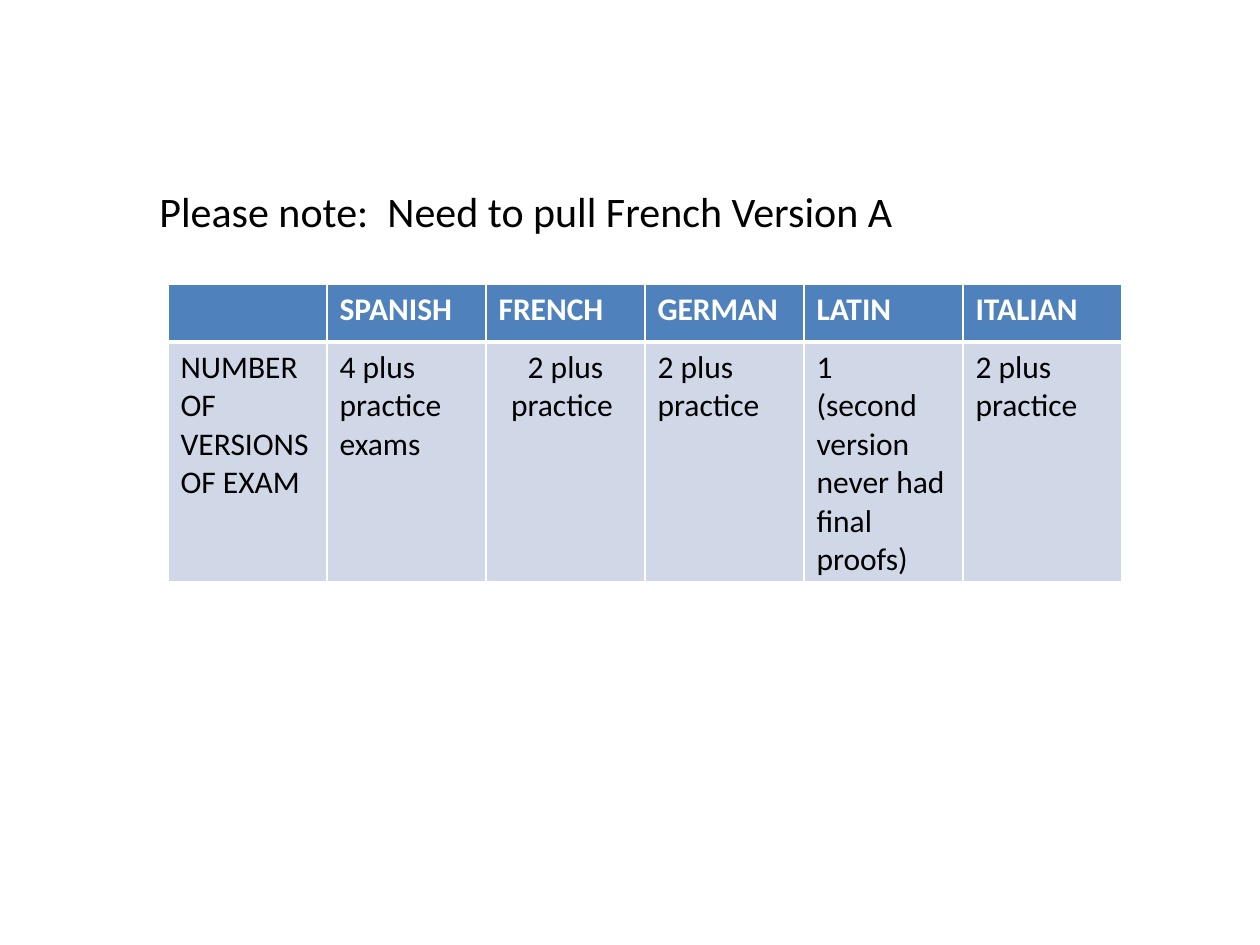
from dataclasses import dataclass

from lxml import etree
from pptx import Presentation
from pptx.dml.color import RGBColor
from pptx.enum.text import PP_ALIGN
from pptx.oxml.ns import qn
from pptx.util import Emu, Pt

LEFT, CENTER = PP_ALIGN.LEFT, PP_ALIGN.CENTER
PX = 914400 // 126


@dataclass(frozen=True)
class Theme:
    font: str = "Calibri"
    note_size: int = 24
    cell_size: int = 18
    black: str = "000000"
    white: str = "FFFFFF"
    header: str = "4F81BD"
    body: str = "D0D8E8"
    thin: int = 1
    thick: int = 3


T = Theme()
NOTE = "Please note:  Need to pull French Version A"
NOTE_BOX = (147, 179, 829, 63)
LANGUAGES = ["", "SPANISH", "FRENCH", "GERMAN", "LATIN", "ITALIAN"]
VERSIONS = [
    "NUMBER OF VERSIONS OF EXAM",
    "4 plus practice exams",
    "2 plus practice ",
    "2 plus practice",
    "1\n(second version never had final proofs)",
    "2 plus practice",
]
CENTERED = "FRENCH"
TABLE_LEFT, TABLE_TOP = 168, 284
COL_WIDTH = 159
ROW_HEIGHTS = [58, 239]


def px(n):
    return Emu(n * PX)


def write(tf, text, size=T.cell_size, color=T.black, bold=False, align=LEFT):
    tf.word_wrap = True
    tf.text = text
    for p in tf.paragraphs:
        p.alignment = align
        for font in [p.font] + [r.font for r in p.runs]:
            font.name = T.font
            font.size = Pt(size)
            font.bold = bold
            font.color.rgb = RGBColor.from_string(color)


def set_borders(cell, **widths):
    tcPr = cell._tc.get_or_add_tcPr()
    for side in "LRTB":
        ln = etree.SubElement(tcPr, qn(f"a:ln{side}"), w=str(Pt(widths.get(side, T.thin))))
        fill = etree.SubElement(ln, qn("a:solidFill"))
        etree.SubElement(fill, qn("a:srgbClr"), val=T.white)


def set_fill(cell, color):
    cell.fill.solid()
    cell.fill.fore_color.rgb = RGBColor.from_string(color)


def add_versions_table(s):
    size = (len(LANGUAGES) * COL_WIDTH, sum(ROW_HEIGHTS))
    frame = s.shapes.add_table(2, len(LANGUAGES), *map(px, (TABLE_LEFT, TABLE_TOP, *size)))
    table = frame.table
    for row, height in zip(table.rows, ROW_HEIGHTS):
        row.height = px(height)
    for c, (language, versions) in enumerate(zip(LANGUAGES, VERSIONS)):
        table.columns[c].width = px(COL_WIDTH)
        head, body = table.cell(0, c), table.cell(1, c)
        set_borders(head, B=T.thick)
        set_borders(body, T=T.thick)
        set_fill(head, T.header)
        set_fill(body, T.body)
        write(head.text_frame, language, color=T.white, bold=True)
        write(body.text_frame, versions, align=CENTER if language == CENTERED else LEFT)


def main():
    prs = Presentation()
    prs.slide_width, prs.slide_height = px(1260), px(945)
    s = prs.slides.add_slide(prs.slide_layouts[6])
    note = s.shapes.add_textbox(*map(px, NOTE_BOX))
    write(note.text_frame, NOTE, size=T.note_size)
    add_versions_table(s)
    prs.save("out.pptx")


if __name__ == "__main__":
    main()
